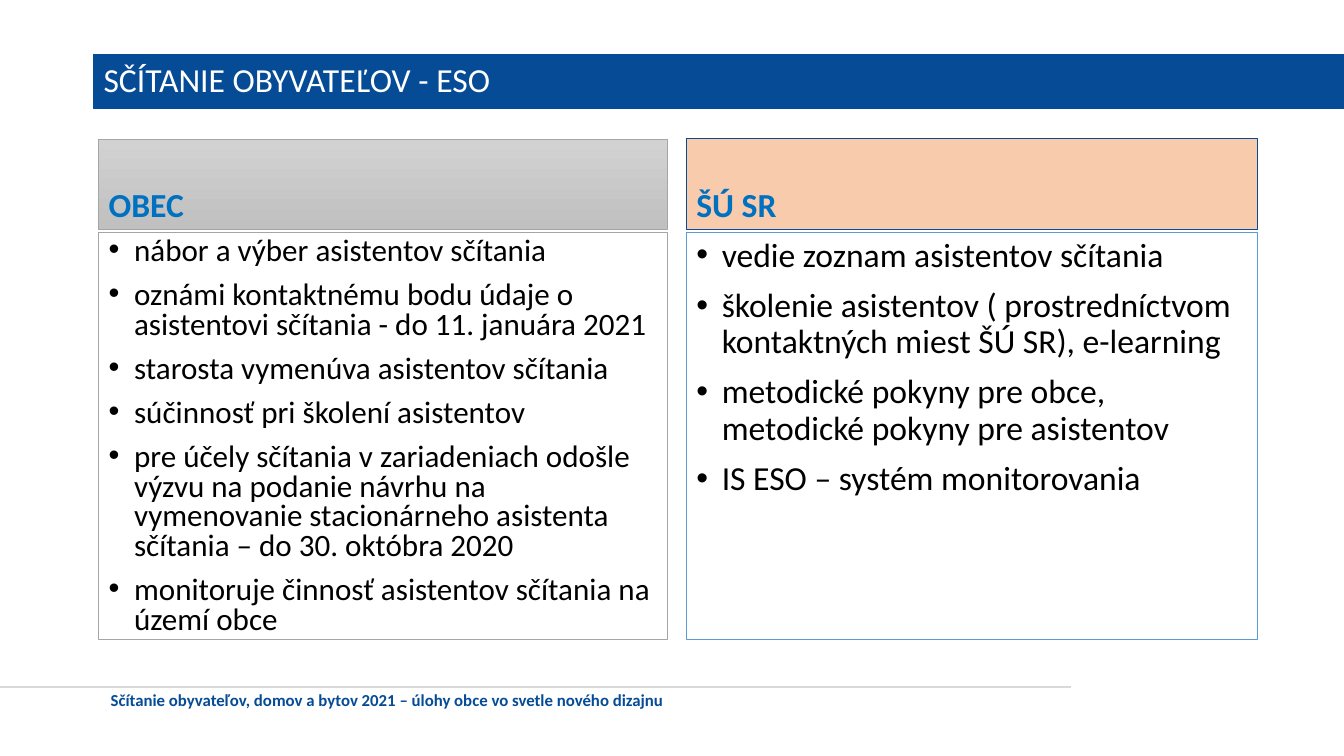
import pptx
import pptx.dml.color
import pptx.enum.shapes
import pptx.enum.text
import pptx.oxml.xmlchemy
import pptx.util
from lxml import etree
from pptx.util import Cm

BLUE = "054B96"
GREY = "A5A5A5"
ANCHOR = pptx.enum.text.MSO_ANCHOR


def rgb(value):
    return pptx.dml.color.RGBColor.from_string(value)


def add_sub(parent, tag, **attrs):
    return etree.SubElement(parent, pptx.oxml.ns.qn(tag), attrs)


def write(tf, lines, size=24, color="000000", bold=False, bullet=False,
          spacing=0.9, anchor=ANCHOR.TOP, inset_top=0.13):
    tf.word_wrap = True
    tf.vertical_anchor = anchor
    tf.margin_left = tf.margin_right = Cm(0.25)
    tf.margin_top, tf.margin_bottom = Cm(inset_top), Cm(0.13)
    for i, line in enumerate(lines):
        p = tf.add_paragraph() if i else tf.paragraphs[0]
        p.alignment = pptx.enum.text.PP_ALIGN.LEFT
        p.line_spacing = spacing
        if i:
            p.space_before = pptx.util.Pt(10)
        if bullet:
            pPr = p._p.get_or_add_pPr()
            pPr.set("marL", str(Cm(0.64)))
            pPr.set("indent", str(-Cm(0.64)))
            add_sub(pPr, "a:buFont", typeface="Arial")
            add_sub(pPr, "a:buChar", char="•")
        r = p.add_run()
        r.text = line
        r.font.name = "Calibri"
        r.font.size = pptx.util.Pt(size)
        r.font.bold = bold
        r.font.color.rgb = rgb(color)


class Deck:
    def __init__(self):
        self.prs = pptx.Presentation()
        self.prs.slide_width, self.prs.slide_height = Cm(33.87), Cm(19.05)
        self.s = self.prs.slides.add_slide(self.prs.slide_layouts[6])

    def rule(self, x1, y1, x2, y2, color, width):
        c = self.s.shapes.add_connector(
            pptx.enum.shapes.MSO_CONNECTOR.STRAIGHT, Cm(x1), Cm(y1), Cm(x2), Cm(y2))
        c.line.color.rgb = rgb(color)
        c.line.width = pptx.util.Pt(width)
        add_sub(c._element.spPr, "a:effectLst")

    def box(self, x, y, w, h, lines, fill=(), line=BLUE, width=0.75, **fmt):
        sp = self.s.shapes.add_shape(
            pptx.enum.shapes.MSO_SHAPE.RECTANGLE, Cm(x), Cm(y), Cm(w), Cm(h))
        sp.shadow.inherit = False
        if len(fill) == 2:
            sp.fill.gradient()
            sp.fill.gradient_angle = 270
            for stop, color, position in zip(sp.fill.gradient_stops, fill, (0, 1)):
                stop.color.rgb = rgb(color)
                stop.position = position
        elif fill:
            sp.fill.solid()
            sp.fill.fore_color.rgb = rgb(fill[0])
        else:
            sp.fill.background()
        sp.line.color.rgb = rgb(line)
        sp.line.width = pptx.util.Pt(width)
        write(sp.text_frame, lines, **fmt)

    def text(self, x, y, w, h, lines, **fmt):
        sp = self.s.shapes.add_textbox(Cm(x), Cm(y), Cm(w), Cm(h))
        write(sp.text_frame, lines, **fmt)


def main():
    deck = Deck()
    deck.rule(0, 17.32, 27, 17.32, "D8D9DA", 1.5)
    columns = [
        dict(x=2.49, w=14.33, head="OBEC", fill=("D2D2D2", "C0C0C0"),
             head_line=GREY, head_width=0.5, body_line=GREY, size=22.2, spacing=0.8,
             items=["nábor a výber asistentov sčítania",
                    "oznámi kontaktnému bodu údaje o asistentovi sčítania - do 11. januára 2021",
                    "starosta vymenúva asistentov sčítania",
                    "súčinnosť pri školení asistentov",
                    "pre účely sčítania v zariadeniach odošle výzvu na podanie návrhu na "
                    "vymenovanie stacionárneho asistenta sčítania – do 30. októbra 2020",
                    "monitoruje činnosť asistentov sčítania na území obce"]),
        dict(x=17.3, w=14.4, head="ŠÚ SR", fill=("F8CBAD",),
             head_line=BLUE, head_width=0.75, body_line="5B9BD5", size=24, spacing=0.9,
             items=["vedie zoznam asistentov sčítania",
                    "školenie asistentov ( prostredníctvom kontaktných miest ŠÚ SR), e-learning",
                    "metodické pokyny pre obce, metodické pokyny pre asistentov",
                    "IS ESO – systém monitorovania"]),
    ]
    for col in columns:
        deck.box(col["x"], 3.5, col["w"], 2.29, [col["head"]], col["fill"],
                 col["head_line"], col["head_width"],
                 color="0070C0", bold=True, anchor=ANCHOR.BOTTOM)
        deck.box(col["x"], 5.87, col["w"], 10.24, col["items"], line=col["body_line"],
                 size=col["size"], spacing=col["spacing"], bullet=True)
    deck.box(2.36, 1.37, 31.51, 1.37, ["SČÍTANIE OBYVATEĽOV - ESO"], (BLUE,),
             color="FFFFFF", anchor=ANCHOR.MIDDLE)
    deck.text(2.54, 17.4, 24.46, 1.02,
              ["Sčítanie obyvateľov, domov a bytov 2021 – úlohy obce vo svetle nového dizajnu"],
              size=12, color=BLUE, bold=True, inset_top=0.05)
    deck.prs.save("out.pptx")


if __name__ == "__main__":
    main()
